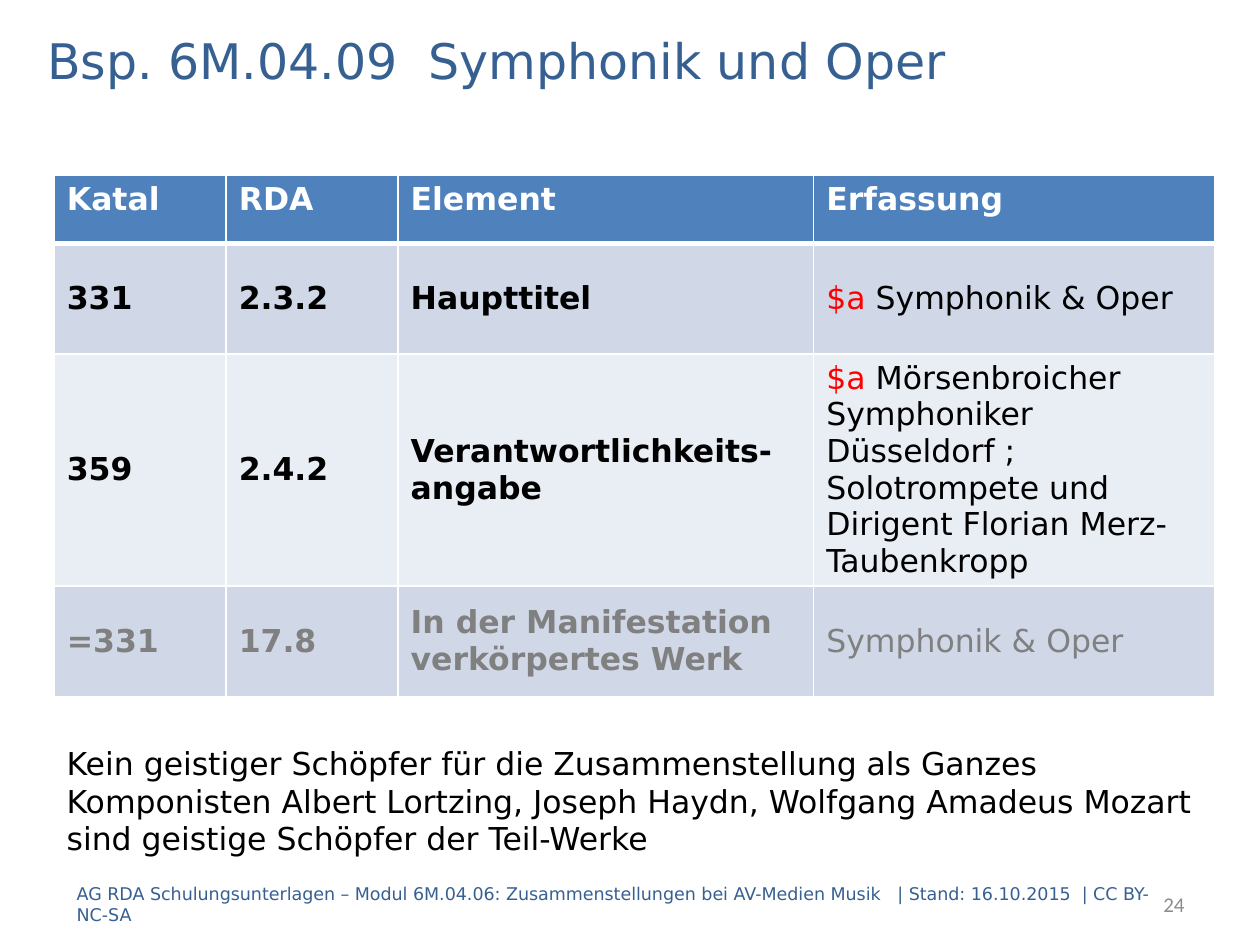
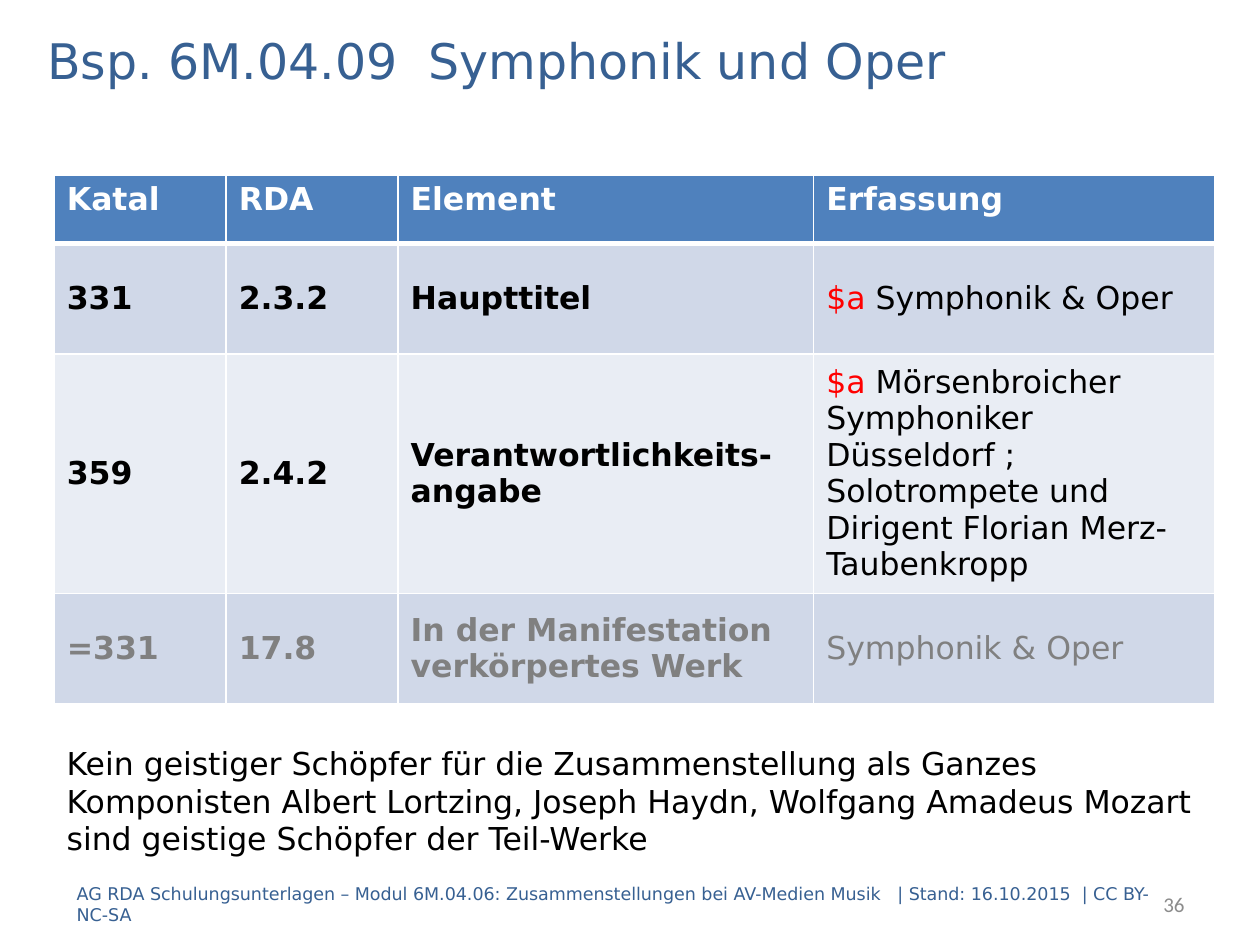
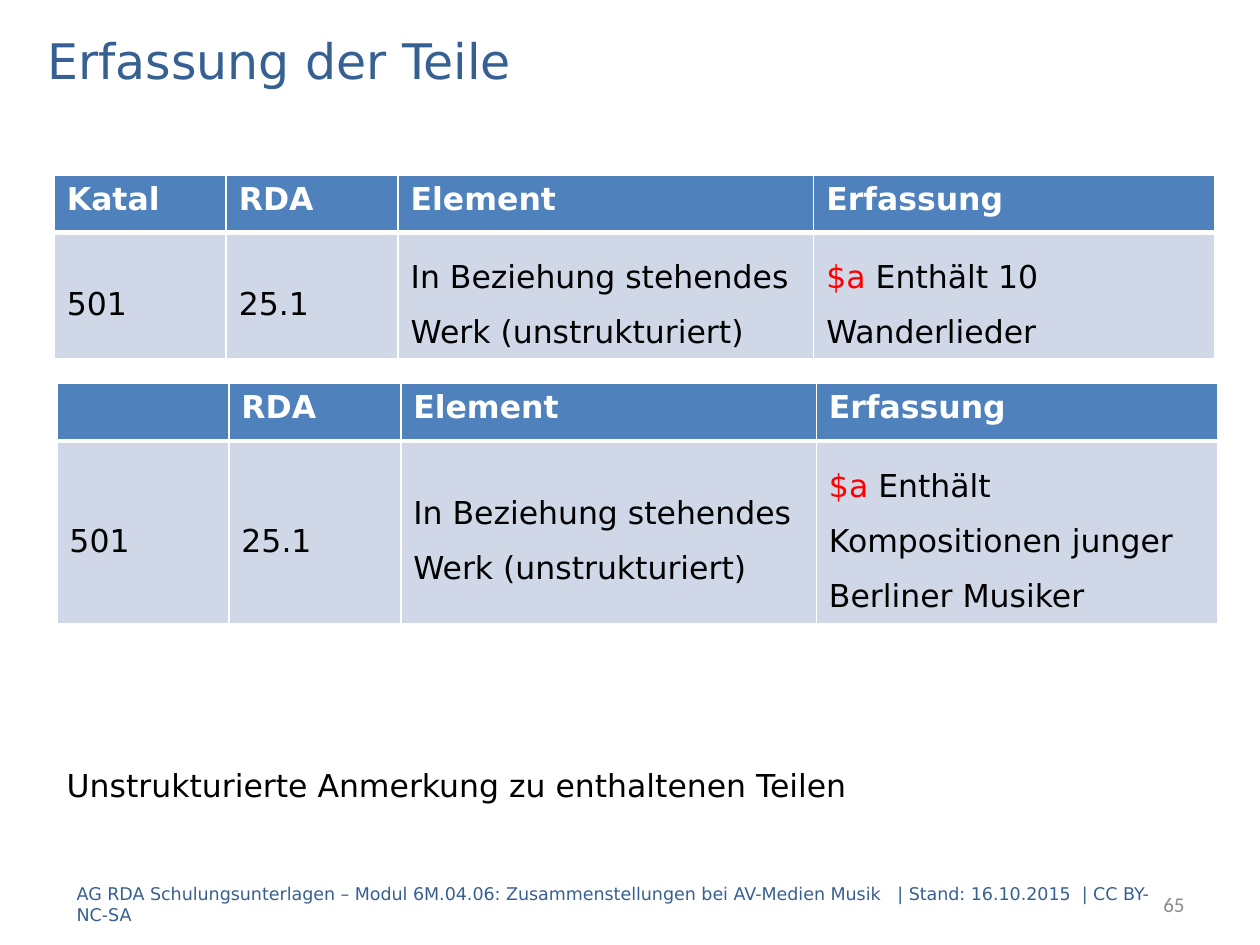
from dataclasses import dataclass

from lxml.etree import SubElement
from pptx import Presentation
from pptx.dml.color import RGBColor
from pptx.enum.text import MSO_ANCHOR as Anchor, PP_ALIGN as Align
from pptx.oxml.ns import qn
from pptx.slide import Slide
from pptx.table import _Cell as Cell
from pptx.text.text import _Paragraph as Para
from pptx.util import Pt

WHITE = RGBColor(0xFF, 0xFF, 0xFF)
BLACK = RGBColor(0x00, 0x00, 0x00)
RED = RGBColor(0xFF, 0x00, 0x00)
GRAY = RGBColor(0x80, 0x80, 0x80)
PAGE_GRAY = RGBColor(0x8C, 0x8C, 0x8C)
NAVY = RGBColor(0x37, 0x60, 0x92)
HEADER_BLUE = RGBColor(0x4F, 0x81, 0xBD)
BANDS = (RGBColor(0xD0, 0xD8, 0xE8), RGBColor(0xE9, 0xED, 0xF4))

FONT = "DejaVu Sans"
COLUMN_WIDTHS = (98.25, 98.25, 237.5, 229.25)
HEADER = ("Katal", "RDA", "Element", "Erfassung")
FOOTER = (
    "AG RDA Schulungsunterlagen – Modul 6M.04.06: Zusammenstellungen bei "
    "AV-Medien Musik   | Stand: 16.10.2015  | CC BY-NC-SA"
)


@dataclass(frozen=True)
class Span:
    """A stretch of text in one style."""

    text: str
    color: RGBColor = BLACK
    bold: bool = False
    size: float = 18
    font: str = FONT


@dataclass(frozen=True)
class Frame:
    """A rectangle in points."""

    left: float
    top: float
    width: float
    height: float


@dataclass(frozen=True)
class Row:
    """A body row, one tuple of spans per cell."""

    height: float
    cells: tuple[tuple[Span, ...], ...]


@dataclass(frozen=True)
class Grid:
    """A table with a header and banded body rows."""

    left: float
    top: float
    header_height: float
    rows: tuple[Row, ...]
    header: tuple[str, ...] = HEADER
    line_spacing: float = 1.0


@dataclass(frozen=True)
class Page:
    """The content of one slide."""

    number: int
    title: str
    grids: tuple[Grid, ...]
    note_frame: Frame
    notes: tuple[str, ...]


TITLE_FRAME = Frame(20, 14, 680.5, 40)
FOOTER_FRAME = Frame(36.75, 502.5, 629.5, 28.5)
NUMBER_FRAME = Frame(569.5, 502.5, 114.5, 28.5)


def labels(*texts: str, color: RGBColor = BLACK, bold: bool = False) -> tuple[tuple[Span, ...], ...]:
    """Turn texts into cells of one span each."""
    return tuple((Span(text, color, bold),) for text in texts)


def entry(text: str) -> tuple[Span, ...]:
    """Put the red subfield code before an entry."""
    return Span("$a ", RED), Span(text)


def unstructured(left: float, top: float, text: str, first: str) -> Grid:
    """Describe a table with one unstructured related work."""
    cells = labels("501", "25.1", "In Beziehung stehendes Werk (unstrukturiert)")
    return Grid(left, top, 33, (Row(54, (*cells, entry(text))),), (first, *HEADER[1:]), 1.5)


def add_spans(para: Para, spans: tuple[Span, ...]) -> None:
    """Add each span as a run."""
    for span in spans:
        run = para.add_run()
        run.text = span.text
        run.font.name = span.font
        run.font.size = Pt(span.size)
        run.font.bold = span.bold
        run.font.color.rgb = span.color


def add_text(slide: Slide, frame: Frame, *spans: Span, align: Align = Align.LEFT) -> None:
    """Add a text box with one paragraph per span."""
    box = slide.shapes.add_textbox(Pt(frame.left), Pt(frame.top), Pt(frame.width), Pt(frame.height))
    text = box.text_frame
    text.word_wrap = True
    text.vertical_anchor = Anchor.MIDDLE
    for index, span in enumerate(spans):
        para = text.add_paragraph() if index else text.paragraphs[0]
        para.alignment = align
        add_spans(para, (span,))


def style_cell(cell: Cell, fill: RGBColor, top: float = 1, bottom: float = 1) -> None:
    """Fill a cell and draw its white borders."""
    properties = cell._tc.get_or_add_tcPr()
    for side, width in (("L", 1), ("R", 1), ("T", top), ("B", bottom)):
        line = SubElement(properties, qn(f"a:ln{side}"), w=str(Pt(width)))
        paint = SubElement(line, qn("a:solidFill"))
        SubElement(paint, qn("a:srgbClr"), val=str(WHITE))
    cell.fill.solid()
    cell.fill.fore_color.rgb = fill


def add_grid(slide: Slide, grid: Grid) -> None:
    """Add a table with its header and body rows."""
    heights = (grid.header_height, *(row.height for row in grid.rows))
    table = slide.shapes.add_table(
        len(heights), len(COLUMN_WIDTHS), Pt(grid.left), Pt(grid.top),
        Pt(sum(COLUMN_WIDTHS)), Pt(sum(heights)),
    ).table
    table.horz_banding = False
    for column, width in zip(table.columns, COLUMN_WIDTHS):
        column.width = Pt(width)
    for line, height in zip(table.rows, heights):
        line.height = Pt(height)
    for column, text in enumerate(grid.header):
        cell = table.cell(0, column)
        style_cell(cell, HEADER_BLUE, bottom=3)
        if text:
            add_spans(cell.text_frame.paragraphs[0], (Span(text, WHITE, True),))
    for index, row in enumerate(grid.rows):
        for column, spans in enumerate(row.cells):
            cell = table.cell(index + 1, column)
            style_cell(cell, BANDS[index % 2], top=1 if index else 3)
            cell.vertical_anchor = Anchor.MIDDLE
            para = cell.text_frame.paragraphs[0]
            para.space_before = para.space_after = Pt(6)
            para.line_spacing = grid.line_spacing
            add_spans(para, spans)


def add_page(deck: Presentation, page: Page) -> None:
    """Add one slide with title, tables, note and footer."""
    slide = deck.slides.add_slide(deck.slide_layouts[6])
    for grid in page.grids:
        add_grid(slide, grid)
    add_text(slide, TITLE_FRAME, Span(page.title, NAVY, size=28))
    add_text(slide, page.note_frame, *(Span(note) for note in page.notes))
    add_text(slide, FOOTER_FRAME, Span(FOOTER, NAVY, size=10))
    number = Span(str(page.number), PAGE_GRAY, size=12, font="Calibri")
    add_text(slide, NUMBER_FRAME, number, align=Align.RIGHT)


SYMPHONY_GRID = Grid(31, 100, 39, (
    Row(63.25, (*labels("331", "2.3.2", "Haupttitel", bold=True), entry("Symphonik & Oper"))),
    Row(84, (
        *labels("359", "2.4.2", "Verantwortlichkeits-angabe", bold=True),
        entry("Mörsenbroicher Symphoniker Düsseldorf ; Solotrompete und Dirigent Florian Merz-Taubenkropp"),
    )),
    Row(63.25, (
        *labels("=331", "17.8", "In der Manifestation verkörpertes Werk", color=GRAY, bold=True),
        *labels("Symphonik & Oper", color=GRAY),
    )),
))
SYMPHONY_NOTES = (
    "Kein geistiger Schöpfer für die Zusammenstellung als Ganzes",
    "Komponisten Albert Lortzing, Joseph Haydn, Wolfgang Amadeus Mozart "
    "sind geistige Schöpfer der Teil-Werke",
)
PARTS_GRIDS = (
    unstructured(31, 100, "Enthält 10 Wanderlieder", HEADER[0]),
    unstructured(32.5, 219, "Enthält Kompositionen junger Berliner Musiker", ""),
)
PAGES = (
    *(
        Page(number, "Bsp. 6M.04.09  Symphonik und Oper", (SYMPHONY_GRID,),
             Frame(31, 417.5, 680.5, 80), SYMPHONY_NOTES)
        for number in (24, 36)
    ),
    Page(65, "Erfassung der Teile", PARTS_GRIDS, Frame(31, 428.5, 680.5, 40),
         ("Unstrukturierte Anmerkung zu enthaltenen Teilen",)),
)


def main() -> None:
    """Build and save the deck."""
    deck = Presentation()
    deck.slide_width, deck.slide_height = Pt(720), Pt(540)
    for page in PAGES:
        add_page(deck, page)
    deck.save("out.pptx")


if __name__ == "__main__":
    main()
